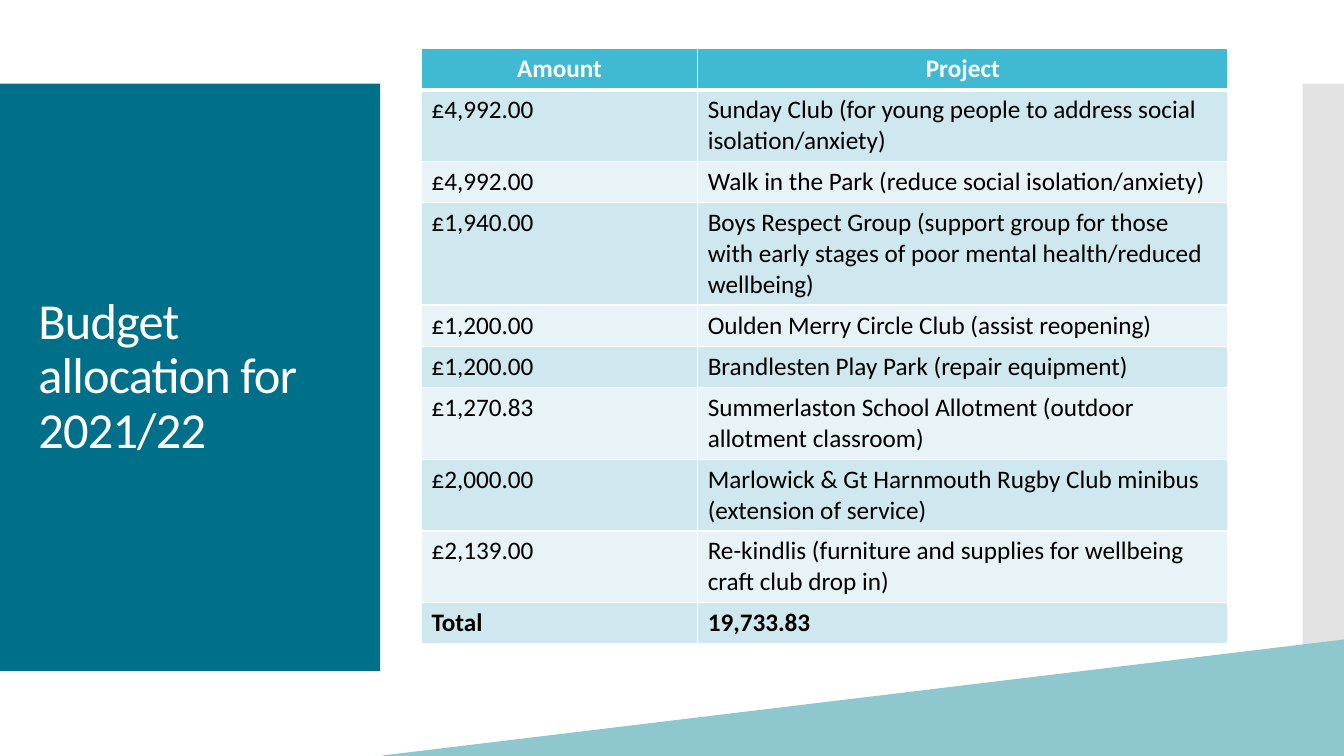
from lxml import etree
from pptx import Presentation
from pptx.dml import color
from pptx.enum import shapes, text
from pptx.oxml import ns
from pptx.util import Inches, Pt

COLORS = {
    "white": "FFFFFF",
    "black": "000000",
    "panel": "00708A",
    "strip": "C8C8C8",
    "wedge": "8EC7CE",
    "header": "40BAD2",
    "odd_row": "CFE7EE",
    "even_row": "E8F3F7",
}
FONT = "Calibri"
HEADINGS = ("Amount", "Project")
ALLOCATIONS = [
    ("£4,992.00", "Sunday Club (for young people to address social isolation/anxiety)"),
    ("£4,992.00", "Walk in the Park (reduce social isolation/anxiety)"),
    ("£1,940.00", "Boys Respect Group (support group for those with early stages "
                  "of poor mental health/reduced wellbeing)"),
    ("£1,200.00", "Oulden Merry Circle Club (assist reopening)"),
    ("£1,200.00", "Brandlesten Play Park (repair equipment)"),
    ("£1,270.83", "Summerlaston School Allotment (outdoor allotment classroom)"),
    ("£2,000.00", "Marlowick & Gt Harnmouth Rugby Club minibus (extension of service)"),
    ("£2,139.00", "Re-kindlis (furniture and supplies for wellbeing craft club drop in)"),
]
TOTAL = ("Total", "19,733.83")


def rgb(name):
    """Return the named colour."""
    return color.RGBColor.from_string(COLORS[name])


def add_block(slide, kind, box, fill):
    """Add a plain filled shape in the box."""
    shape = slide.shapes.add_shape(kind, *map(Inches, box))
    shape.shadow.inherit = False
    shape.fill.solid()
    shape.fill.fore_color.rgb = rgb(fill)
    shape.line.fill.background()
    return shape


def format_runs(paragraph, size, fill, bold=False):
    """Apply font, size, colour and weight to every run."""
    for run in paragraph.runs:
        run.font.name = FONT
        run.font.size = Pt(size)
        run.font.color.rgb = rgb(fill)
        run.font.bold = bold


def add_side_strip(slide, box):
    """Add the half-transparent strip at the right edge."""
    strip = add_block(slide, shapes.MSO_SHAPE.RECTANGLE, box, "strip")
    solid = strip.element.spPr.find(ns.qn("a:solidFill"))
    etree.SubElement(solid[0], ns.qn("a:alpha"), val="50000")


def add_wedge(slide, box):
    """Add the rising wedge along the bottom."""
    wedge = add_block(slide, shapes.MSO_SHAPE.ISOSCELES_TRIANGLE, box, "wedge")
    wedge.adjustments[0] = 1
    wedge.line.color.rgb = rgb("wedge")
    wedge.line.width = Pt(0.85)


def add_title_panel(slide, box):
    """Add the dark panel with the slide title on it."""
    left, top, width, height = box
    add_block(slide, shapes.MSO_SHAPE.RECTANGLE, box, "panel")
    title = slide.shapes.title
    title.left, title.top = Inches(left + 0.28), Inches(top + 0.4)
    title.width, title.height = Inches(width - 0.55), Inches(height - 0.8)
    title.element.getparent().append(title.element)
    frame = title.text_frame
    frame.text = "Budget allocation for 2021/22"
    frame.word_wrap = True
    frame.auto_size = text.MSO_AUTO_SIZE.NONE
    frame.vertical_anchor = text.MSO_ANCHOR.MIDDLE
    paragraph = frame.paragraphs[0]
    paragraph.alignment = text.PP_ALIGN.LEFT
    paragraph.line_spacing = 0.9
    format_runs(paragraph, 36, "white")
    paragraph.runs[0].font._element.set("spc", "-60")


def add_border(cell, side, points):
    """Draw a white border on one side of a cell."""
    properties = cell._tc.get_or_add_tcPr()
    line = etree.SubElement(properties, ns.qn(f"a:ln{side}"), w=str(Pt(points)))
    solid = etree.SubElement(line, ns.qn("a:solidFill"))
    etree.SubElement(solid, ns.qn("a:srgbClr"), val=COLORS["white"])


def add_budget_table(slide, box):
    """Add the table of amounts and projects."""
    rows = [HEADINGS, *ALLOCATIONS, TOTAL]
    frame = slide.shapes.add_table(len(rows), len(HEADINGS), *map(Inches, box))
    table = frame.table
    for column, width in zip(table.columns, (2.74, 5.26)):
        column.width = Inches(width)
    for row_index, values in enumerate(rows):
        is_header = row_index == 0
        fill = "header" if is_header else ("even_row", "odd_row")[row_index % 2]
        table.rows[row_index].height = Inches(0.41)
        for column_index, value in enumerate(values):
            cell = table.cell(row_index, column_index)
            for side in "LRTB":
                if side != "T" or row_index != 1:
                    add_border(cell, side, 3 if is_header and side == "B" else 1)
            cell.fill.solid()
            cell.fill.fore_color.rgb = rgb(fill)
            cell.text_frame.text = value
            paragraph = cell.text_frame.paragraphs[0]
            paragraph.alignment = text.PP_ALIGN.CENTER if is_header else text.PP_ALIGN.LEFT
            format_runs(paragraph, 18, "white" if is_header else "black",
                        is_header or values == TOTAL)
    frame.height = Inches(box[3])


def main():
    """Build and save the presentation."""
    presentation = Presentation()
    presentation.slide_width = Inches(13.33)
    presentation.slide_height = Inches(7.5)
    slide = presentation.slides.add_slide(presentation.slide_layouts[5])
    slide.background.fill.solid()
    slide.background.fill.fore_color.rgb = rgb("white")
    add_title_panel(slide, (0, 0.83, 3.77, 5.83))
    add_side_strip(slide, (12.92, 0.83, 0.41, 5.83))
    add_wedge(slide, (3.8, 6.35, 9.53, 1.15))
    add_budget_table(slide, (4.18, 0.48, 8, 5.83))
    presentation.save("out.pptx")


if __name__ == "__main__":
    main()
